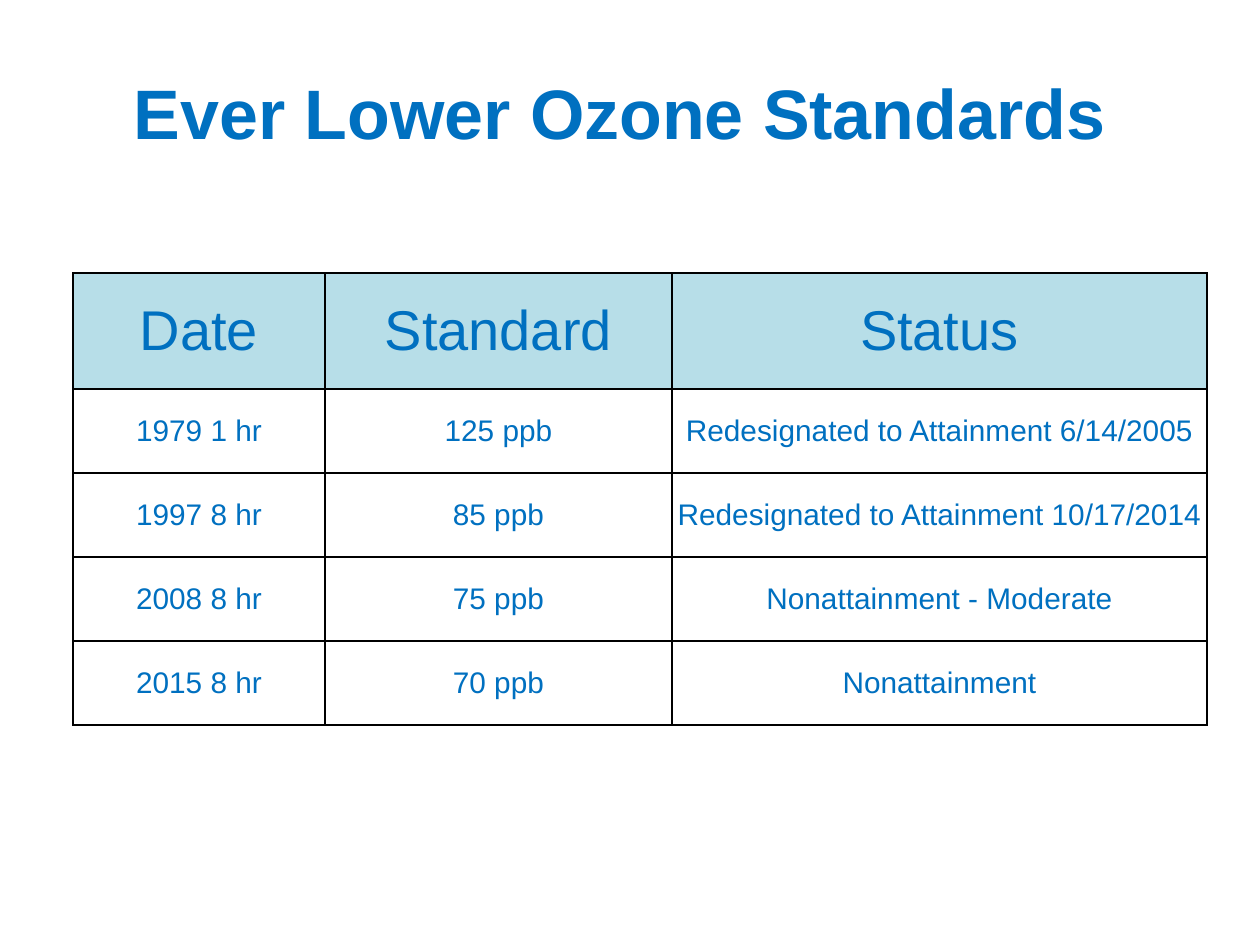
"""Build a slide with a table of successive ozone standards."""
from lxml.etree import SubElement
from pptx import Presentation
from pptx.dml.color import RGBColor
from pptx.enum.text import MSO_ANCHOR, PP_ALIGN
from pptx.oxml.ns import qn
from pptx.util import Pt

TITLE = "Ever Lower Ozone Standards"
ROWS = [
    ("Date", "Standard", "Status"),
    ("1979 1 hr", "125 ppb", "Redesignated to Attainment 6/14/2005"),
    ("1997 8 hr", "85 ppb", "Redesignated to Attainment 10/17/2014"),
    ("2008 8 hr", "75 ppb", "Nonattainment - Moderate"),
    ("2015 8 hr", "70 ppb", "Nonattainment"),
]
COLUMN_WIDTHS = (252, 347, 535)
HEADER_HEIGHT, ROW_HEIGHT = 116, 84
TABLE_LEFT, TABLE_TOP = 73, 273
TITLE_AREA = (42, 63, 1155, 97)
SLIDE_SIZE = (1260, 945)

FONT = "Arial"
BLUE = RGBColor(0x00, 0x70, 0xC0)
PALE_BLUE = RGBColor(0xB7, 0xDE, 0xE8)
BLACK = RGBColor(0x00, 0x00, 0x00)


def px(length):
    return round(length * 914400 / 126)


def write(frame, text, size, bold=False):
    para = frame.paragraphs[0]
    para.alignment = PP_ALIGN.CENTER
    span = para.add_run()
    span.text = text
    span.font.name = FONT
    span.font.size = Pt(size)
    span.font.bold = bold
    span.font.color.rgb = BLUE


def add_borders(cell):
    properties = cell._tc.get_or_add_tcPr()
    for position, side in enumerate(("a:lnL", "a:lnR", "a:lnT", "a:lnB")):
        line = SubElement(properties, qn(side), w=str(Pt(1)))
        fill = SubElement(line, qn("a:solidFill"))
        SubElement(fill, qn("a:srgbClr"), val=str(BLACK))
        properties.insert(position, line)


def add_title(page):
    box = page.shapes.add_textbox(*map(px, TITLE_AREA))
    box.text_frame.word_wrap = True
    write(box.text_frame, TITLE, 40, bold=True)


def add_standards_table(page):
    heights = [HEADER_HEIGHT] + [ROW_HEIGHT] * (len(ROWS) - 1)
    area = (TABLE_LEFT, TABLE_TOP, sum(COLUMN_WIDTHS), sum(heights))
    table = page.shapes.add_table(len(ROWS), len(COLUMN_WIDTHS), *map(px, area)).table
    table.horz_banding = False
    for column, width in zip(table.columns, COLUMN_WIDTHS):
        column.width = px(width)
    for index, (row, height, texts) in enumerate(zip(table.rows, heights, ROWS)):
        row.height = px(height)
        for cell, text in zip(row.cells, texts):
            cell.vertical_anchor = MSO_ANCHOR.MIDDLE
            cell.margin_left = cell.margin_right = cell.margin_top = px(1)
            cell.margin_bottom = 0
            if index == 0:
                cell.fill.solid()
                cell.fill.fore_color.rgb = PALE_BLUE
            else:
                cell.fill.background()
            write(cell.text_frame, text, 32 if index == 0 else 17)
            add_borders(cell)


def main():
    deck = Presentation()
    deck.slide_width, deck.slide_height = map(px, SLIDE_SIZE)
    page = deck.slides.add_slide(deck.slide_layouts[6])
    add_title(page)
    add_standards_table(page)
    deck.save("out.pptx")


if __name__ == "__main__":
    main()
